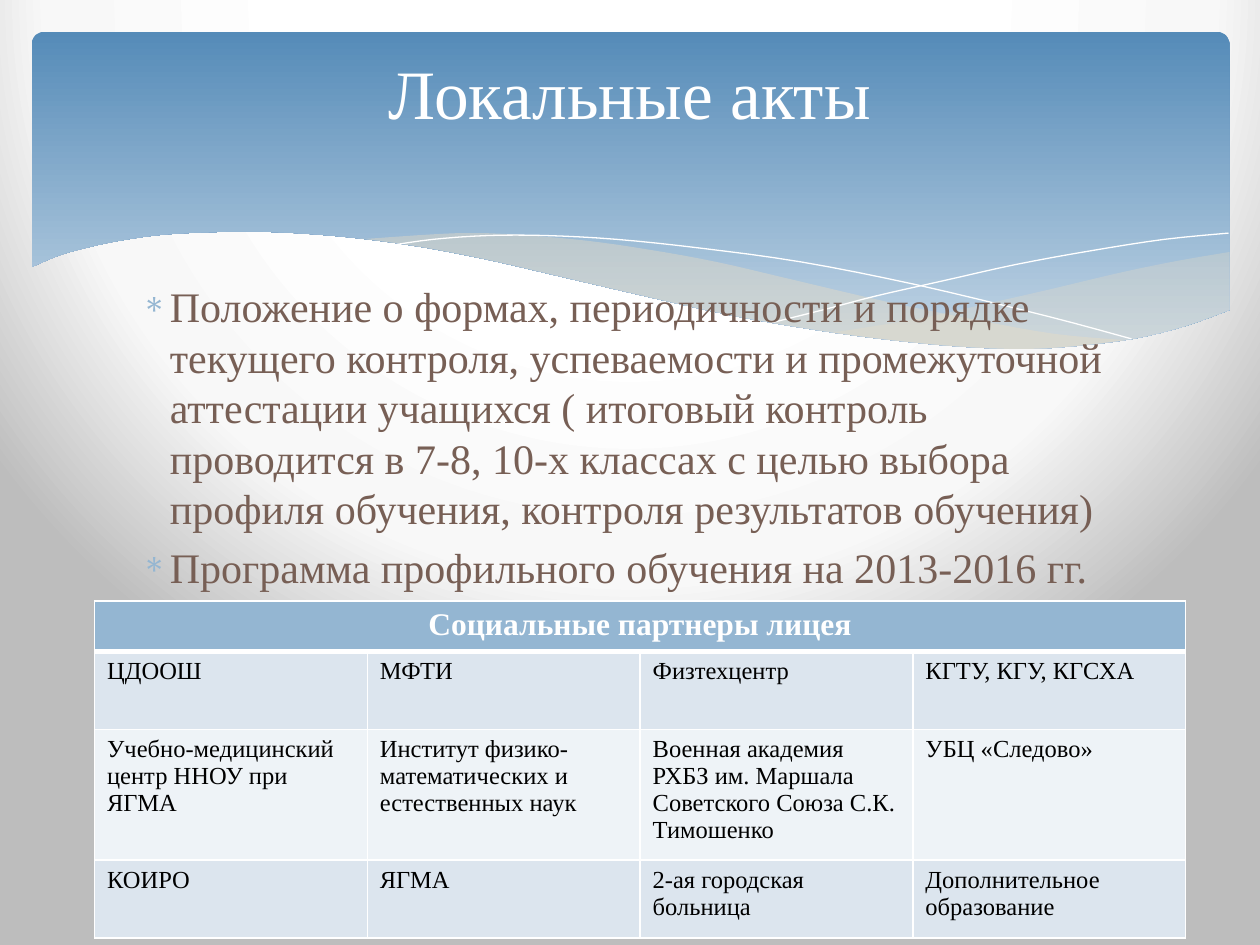
from lxml import etree
from pptx import Presentation
from pptx import util as u
from pptx.dml.color import RGBColor
from pptx.enum import text
from pptx.oxml.ns import qn

WIDTH, HEIGHT = 10, 7.5
FONT = "Times New Roman"
WHITE, BLUE, SAND, BROWN = "FFFFFF", "94B6D2", "EBDDC3", "775F55"
BANDS = ("DCE5EE", "EEF3F7")

TITLE = "Локальные акты"
ACTS = [
    "Положение о формах, периодичности и порядке текущего контроля, успеваемости и "
    "промежуточной аттестации учащихся ( итоговый контроль проводится в 7-8, 10-х классах "
    "с целью выбора профиля обучения, контроля результатов обучения)",
    "Программа профильного обучения на 2013-2016 гг.",
]
PARTNERS_TITLE = "Социальные партнеры лицея"
PARTNERS = [
    ("ЦДООШ", "МФТИ", "Физтехцентр", "КГТУ, КГУ, КГСХА"),
    ("Учебно-медицинский центр ННОУ при ЯГМА",
     "Институт физико-математических и естественных наук",
     "Военная академия РХБЗ им. Маршала Советского Союза С.К. Тимошенко",
     "УБЦ «Следово»"),
    ("КОИРО", "ЯГМА", "2-ая городская больница", "Дополнительное образование"),
]
ROW_HEIGHTS = (0.39, 0.62, 0.97, 0.62)

GLOW = ([(40, WHITE), (74, "F8F8F8"), (100, "BDBDBD")],
        ("path", {"path": "circle"}, {"l": 20, "t": -40, "r": 20, "b": 140}))
SKY = ([(0, "558BB8"), (96, "BFD3E4")], ("lin", {"ang": "5400000", "scaled": "0"}, None))

WAVE = [
    (0.25, 2.12), (0.46, 2.03), (0.67, 1.97), (0.95, 1.91), (1.32, 1.86), (1.77, 1.84),
    (2.11, 1.84), (2.5, 1.86), (2.92, 1.9), (3.4, 1.97), (3.91, 2.07), (4.47, 2.2),
    (5.03, 2.33), (5.79, 2.5), (6.48, 2.62), (7.08, 2.7), (7.61, 2.75), (8.09, 2.77),
    (8.5, 2.75), (8.99, 2.69), (9.4, 2.59), (9.76, 2.46),
]
SKY_CORNERS = [
    [(9.76, 0.34), (9.73, 0.28), (9.67, 0.25)],
    [(0.34, 0.25), (0.28, 0.28), (0.25, 0.34)],
]
RIGHT_CREST = [
    (9.76, 2), (9.35, 2.07), (8.91, 2.16), (8.32, 2.3), (7.79, 2.42), (7.29, 2.53), (6.61, 2.64),
]
MIDDLE_CREST = [
    (8.93, 2.7), (8.37, 2.65), (7.75, 2.54), (7.06, 2.4), (6.29, 2.22), (5.69, 2.08),
    (5.14, 1.98), (4.65, 1.91), (4.2, 1.87), (3.8, 1.85), (3.44, 1.86), (2.86, 1.9),
]
FALLING_LINE = [
    (3.09, 1.95), (3.44, 1.9), (3.87, 1.87), (4.33, 1.87), (4.89, 1.9), (5.56, 1.97),
    (6.36, 2.08), (7.27, 2.26), (8.31, 2.51), (8.98, 2.69),
]
RISING_LINE = [
    (6.13, 2.56), (6.53, 2.46), (6.95, 2.35), (7.48, 2.23), (8.06, 2.1), (8.66, 1.99),
    (9.24, 1.9), (9.75, 1.85),
]


def color(value):
    return RGBColor.from_string(value)


def inches(*values):
    return [u.Inches(value) for value in values]


def child(parent, tag, **attributes):
    return etree.SubElement(parent, qn("a:" + tag), attributes)


def paint_gradient(fill, holder, gradient):
    stops, (kind, attributes, focus) = gradient
    fill.gradient()
    node = next(holder.iter(qn("a:gradFill")))
    for old in list(node):
        node.remove(old)
    stop_list = child(node, "gsLst")
    for position, value in stops:
        child(child(stop_list, "gs", pos=str(position * 1000)), "srgbClr", val=value)
    shading = child(node, kind, **attributes)
    if focus:
        child(shading, "fillToRect", **{side: str(share * 1000) for side, share in focus.items()})


def smooth(points, steps=4):
    padded = [points[0], *points, points[-1]]
    curve = [points[0]]
    for before, start, end, after in zip(padded, padded[1:], padded[2:], padded[3:]):
        for step in range(1, steps + 1):
            t = step / steps
            curve.append(tuple(
                (2 * b + (c - a) * t + (2 * a - 5 * b + 4 * c - d) * t ** 2
                 + (3 * b - a - 3 * c + d) * t ** 3) / 2
                for a, b, c, d in zip(before, start, end, after)))
    return curve


def add_outline(page, curves, close=True):
    points = [inches(*point) for curve in curves for point in smooth(curve)]
    builder = page.shapes.build_freeform(*points[0], scale=1.0)
    builder.add_line_segments(points[1:], close=close)
    outline = builder.convert_to_shape()
    outline.shadow.inherit = False
    return outline


def add_sky(page):
    sky = add_outline(page, [WAVE, *SKY_CORNERS])
    sky.line.fill.background()
    paint_gradient(sky.fill, sky._element, SKY)


def add_ribbon(page, crest, opacity):
    right, left = crest[0], crest[-1]
    inner = [point for point in WAVE if left[0] < point[0] < right[0]]
    end = right if right in WAVE or right[0] < WAVE[-1][0] else WAVE[-1]
    ribbon = add_outline(page, [crest, [left, *inner, end]])
    ribbon.line.fill.background()
    ribbon.fill.solid()
    ribbon.fill.fore_color.rgb = color(SAND)
    child(next(ribbon.fill._xPr.iter(qn("a:srgbClr"))), "alpha", val=str(opacity * 1000))


def add_hairline(page, curve):
    line = add_outline(page, [curve], close=False)
    line.fill.background()
    line.line.color.rgb = color(WHITE)
    line.line.width = 0


def add_text(para, words, size, value, **formats):
    span = para.add_run()
    span.text = words
    span.font.color.rgb = color(value)
    for name, setting in {"name": FONT, "size": u.Pt(size), **formats}.items():
        setattr(span.font, name, setting)
    child(para._p, "endParaRPr", sz=str(round(size * 100)))


def add_box(page, *place):
    frame = page.shapes.add_textbox(*inches(*place)).text_frame
    frame.word_wrap = True
    return frame


def add_acts(page):
    frame = add_box(page, 0.95, 2.18, 8.1, 4.52)
    for index, act in enumerate(ACTS):
        para = frame.add_paragraph() if index else frame.paragraphs[0]
        if index:
            para.space_before = u.Pt(5)
        properties = para._p.get_or_add_pPr()
        properties.set("marL", str(u.Inches(0.3)))
        properties.set("indent", str(u.Inches(-0.22)))
        child(child(properties, "buClr"), "srgbClr", val=BLUE)
        child(properties, "buSzPct", val="80000")
        child(properties, "buFont", typeface="Symbol")
        child(properties, "buChar", char="∗")
        add_text(para, act, 24, BROWN)


def style_cell(cell, fill, bottom=1):
    properties = cell._tc.get_or_add_tcPr()
    for side, width in (("L", 1), ("R", 1), ("T", 1), ("B", bottom)):
        border = child(properties, "ln" + side, w=str(u.Pt(width)))
        child(child(border, "solidFill"), "srgbClr", val=WHITE)
    cell.fill.solid()
    cell.fill.fore_color.rgb = color(fill)


def add_partners(page):
    columns = len(PARTNERS[0])
    table = page.shapes.add_table(
        len(ROW_HEIGHTS), columns, *inches(0.75, 4.77, 8.66, sum(ROW_HEIGHTS))).table
    for row, height in zip(table.rows, ROW_HEIGHTS):
        row.height = u.Inches(height)
    for cell in table.rows[0].cells:
        style_cell(cell, BLUE, bottom=3)
    header = table.cell(0, 0)
    header.merge(table.cell(0, columns - 1))
    para = header.text_frame.paragraphs[0]
    para.alignment = text.PP_ALIGN.CENTER
    add_text(para, PARTNERS_TITLE, 18, WHITE, bold=True)
    for row, names in enumerate(PARTNERS):
        for column, name in enumerate(names):
            cell = table.cell(row + 1, column)
            style_cell(cell, BANDS[row % 2])
            add_text(cell.text_frame.paragraphs[0], name, 14, "000000", bold=False)


def main():
    deck = Presentation()
    deck.slide_width, deck.slide_height = inches(WIDTH, HEIGHT)
    page = deck.slides.add_slide(deck.slide_layouts[6])
    paint_gradient(page.background.fill, page._element, GLOW)
    add_sky(page)
    add_ribbon(page, RIGHT_CREST, 29)
    add_ribbon(page, MIDDLE_CREST, 40)
    add_hairline(page, FALLING_LINE)
    add_hairline(page, RISING_LINE)
    add_acts(page)
    para = add_box(page, 0.5, 0.35, 9, 1.37).paragraphs[0]
    para.alignment = text.PP_ALIGN.CENTER
    add_text(para, TITLE, 39.6, WHITE)
    add_partners(page)
    deck.save("out.pptx")


if __name__ == "__main__":
    main()
